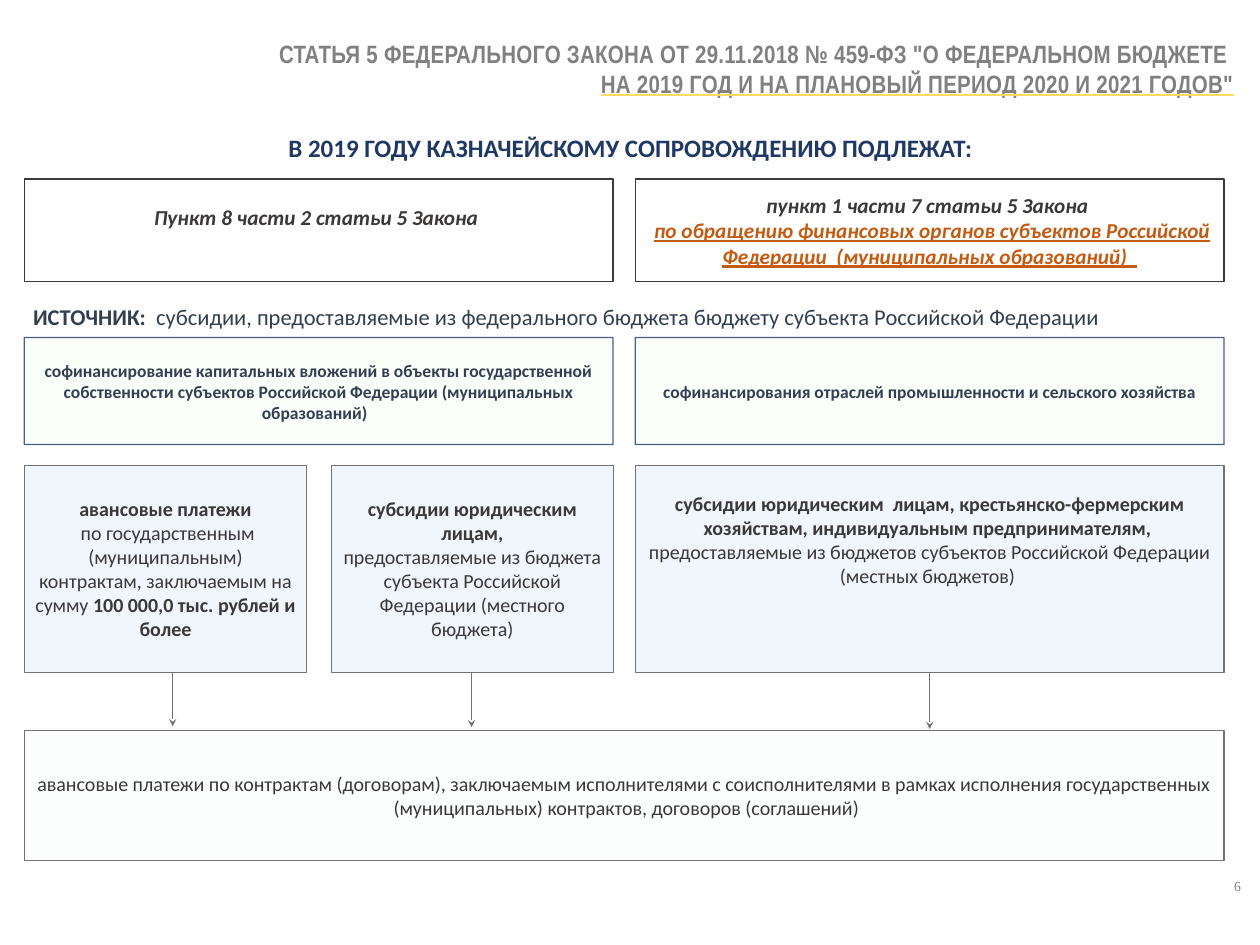
from pptx import Presentation, util as u
from pptx.dml.color import RGBColor
from pptx.enum import shapes, text
from pptx.oxml import parse_xml
from pptx.oxml.ns import nsdecls, qn

Pt = u.Pt
NAVY = RGBColor(0x20, 0x38, 0x64)
SLATE = RGBColor(0x33, 0x3F, 0x50)
DARK = RGBColor(0x3B, 0x38, 0x38)
GRAY = RGBColor(0x76, 0x71, 0x71)
PALE = RGBColor(0x80, 0x80, 0x80)
RUST = RGBColor(0xC5, 0x5A, 0x11)
GOLD = RGBColor(0xFF, 0xD9, 0x66)
WHITE = RGBColor(0xFF, 0xFF, 0xFF)
GREEN = RGBColor(0xEF, 0xFF, 0xEF)
BLUE = RGBColor(0xDE, 0xEB, 0xF7)
MIST = RGBColor(0xD6, 0xDC, 0xE5)

ALIGN = {"l": text.PP_ALIGN.LEFT, "c": text.PP_ALIGN.CENTER, "r": text.PP_ALIGN.RIGHT}
TOP, MID = text.MSO_ANCHOR.TOP, text.MSO_ANCHOR.MIDDLE
BOLD, ULINE = {"bold": True}, {"underline": True}

# Columns: two halves, the left one split again into two cells
LEFT, HALF, CELL, RIGHT = 19.4, 471, 226, 508.3
INNER = LEFT + HALF - CELL + 0.5
FULL = RIGHT + HALF - LEFT
# Rows: top and height
RULE, SOURCE, KIND, BASE = (143.3, 82), (270, 85.7), (372.2, 165.6), (584.6, 103.7)

# Styles of text: size, colour, and other font values
HEAD = {"size": Pt(17), "color": DARK, "bold": True, "italic": True}
AIM = {"size": Pt(14), "color": SLATE, "bold": True}
BODY = {"size": Pt(16), "color": DARK}
TITLE = {"size": Pt(20), "color": PALE, "bold": True, "name": "Arial Narrow"}

# Styles of box: fill, opacity %, line, line opacity %
LAW = (WHITE, 92, DARK, 100)
FUND = (GREEN, 30, NAVY, 80)
PAY = (BLUE, 44, GRAY, 100)
LAST = (MIST, 5, GRAY, 100)

# Boxes: left, width, row, look, font, paragraphs of (words, extra values), frame values
BOXES = [
    (LEFT, HALF, RULE, LAW, HEAD, [[("Пункт 8 части 2 статьи 5 Закона ", {})]],
     {"margin_bottom": Pt(25)}),
    (RIGHT, HALF, RULE, LAW, HEAD, [
        [("пункт 1 части 7 статьи 5 Закона ", {})],
        [(" ", {}), ("по обращению финансовых органов субъектов Российской Федерации  "
                     "(муниципальных образований)  ", {"color": RUST, **ULINE})]], {}),
    (LEFT, HALF, SOURCE, FUND, AIM, [[
        ("софинансирование капитальных вложений в объекты государственной собственности "
         "субъектов Российской Федерации (муниципальных образований)  ", {})]], {}),
    (RIGHT, HALF, SOURCE, FUND, AIM, [[
        ("софинансирования отраслей промышленности и сельского хозяйства", {})]], {}),
    (LEFT, CELL, KIND, PAY, BODY, [
        [("авансовые платежи", BOLD)],
        [(" по государственным (муниципальным) контрактам, заключаемым на сумму ", {}),
         ("100 000,0 тыс. рублей и более", BOLD)]], {}),
    (INNER, CELL, KIND, PAY, BODY, [
        [("субсидии юридическим лицам,", BOLD)],
        [("предоставляемые из бюджета субъекта Российской Федерации "
          "(местного бюджета)", {})]], {}),
    (RIGHT, HALF, KIND, PAY, BODY, [[
        ("субсидии юридическим  лицам, крестьянско-фермерским хозяйствам, "
         "индивидуальным предпринимателям,  ", BOLD),
        ("предоставляемые из бюджетов субъектов Российской Федерации "
         "(местных бюджетов) ", {})]],
     {"vertical_anchor": TOP, "margin_top": Pt(21.4)}),
    (LEFT, FULL, BASE, LAST, BODY, [[
        ("авансовые платежи по контрактам (договорам), заключаемым исполнителями с "
         "соисполнителями в рамках исполнения государственных  (муниципальных) "
         "контрактов, договоров (соглашений)", {})]], {}),
]

# Labels: left, top, width, height, align, font, paragraphs, frame values
LABELS = [
    (19.4, 26.6, 976.3, 56.9, "r", TITLE, [
        [('СТАТЬЯ 5 ФЕДЕРАЛЬНОГО ЗАКОНА ОТ 29.11.2018 № 459-ФЗ "О ФЕДЕРАЛЬНОМ БЮДЖЕТЕ ',
          {"gap": 20})],
        [('НА 2019 ГОД И НА ПЛАНОВЫЙ ПЕРИОД 2020 И 2021 ГОДОВ"',
          {"gap": 20, "rule": GOLD, **ULINE})]], {}),
    (35.3, 101.5, 938.2, 33.1, "c", {"size": Pt(20), "color": NAVY, "bold": True},
     [[("В 2019 ГОДУ КАЗНАЧЕЙСКОМУ СОПРОВОЖДЕНИЮ ПОДЛЕЖАТ:", {})]], {}),
    (19.4, 239, 877, 28.8, "l", {"size": Pt(18), "color": SLATE}, [[
        ("ИСТОЧНИК:  ", BOLD),
        ("субсидии, предоставляемые из федерального бюджета бюджету субъекта "
         "Российской Федерации", {})]],
     {"margin_left": Pt(7.2), "margin_right": Pt(7.2), "margin_top": Pt(3.6)}),
    (968.4, 688.3, 33.1, 40.3, "r",
     {"size": Pt(11), "color": PALE, "name": "Times New Roman"},
     [[("6", {})]], {"vertical_anchor": MID}),
]

# Arrows: x and length
ARROWS = [(138.2, 43.2), (377.3, 44), (743.8, 45.4)]


def put(obj, vals):
    for key, val in vals.items():
        setattr(obj, key, val)


def style(run, vals):
    vals = {"name": "Calibri", "bold": False, **vals}
    run.font.color.rgb = vals.pop("color")
    gap, rule = vals.pop("gap", None), vals.pop("rule", None)
    put(run.font, vals)
    props = run._r.get_or_add_rPr()
    if gap:
        props.set("spc", str(gap))
    if rule:
        props.find(qn("a:latin")).addprevious(parse_xml(
            f'<a:uFill {nsdecls("a")}><a:solidFill><a:srgbClr val="{rule}"/>'
            '</a:solidFill></a:uFill>'))


def write(shape, align, font, paras, extra):
    frame = shape.text_frame
    put(frame, {"word_wrap": True, "margin_left": Pt(8.64), "margin_right": Pt(8.64),
                "margin_top": Pt(4.32), "margin_bottom": Pt(4.32), **extra})
    for i, runs in enumerate(paras):
        para = frame.add_paragraph() if i else frame.paragraphs[0]
        para.alignment = ALIGN[align]
        for words, vals in runs:
            run = para.add_run()
            run.text = words
            style(run, {**font, **vals})


def paint(fill, color, alpha):
    """Fill with a colour at an opacity in percent."""
    fill.solid()
    fill.fore_color.rgb = color
    tint = fill._xPr.find(".//" + qn("a:srgbClr"))
    tint.append(parse_xml(f'<a:alpha {nsdecls("a")} val="{alpha * 1000}"/>'))


deck = Presentation()
put(deck, {"slide_width": Pt(1008), "slide_height": Pt(756)})
page = deck.slides.add_slide(deck.slide_layouts[6]).shapes

for x, wide, (y, high), (fill, alpha, edge, solid), font, paras, extra in BOXES:
    box = page.add_shape(shapes.MSO_SHAPE.RECTANGLE, Pt(x), Pt(y), Pt(wide), Pt(high))
    box.shadow.inherit = False
    paint(box.fill, fill, alpha)
    paint(box.line.fill, edge, solid)
    box.line.width = Pt(1)
    write(box, "c", font, paras, {"vertical_anchor": MID, **extra})

for x, y, wide, high, align, font, paras, extra in LABELS:
    label = page.add_textbox(Pt(x), Pt(y), Pt(wide), Pt(high))
    write(label, align, font, paras, extra)

start = sum(KIND)
for x, long in ARROWS:
    arrow = page.add_connector(shapes.MSO_CONNECTOR.STRAIGHT,
                               Pt(x), Pt(start), Pt(x), Pt(start + long))
    arrow.line.color.rgb = GRAY
    arrow.line.width = Pt(0.5)
    arrow.line._get_or_add_ln().append(
        parse_xml(f'<a:tailEnd {nsdecls("a")} type="stealth"/>'))
    arrow._element.spPr.append(parse_xml(f'<a:effectLst {nsdecls("a")}/>'))

deck.save("out.pptx")
